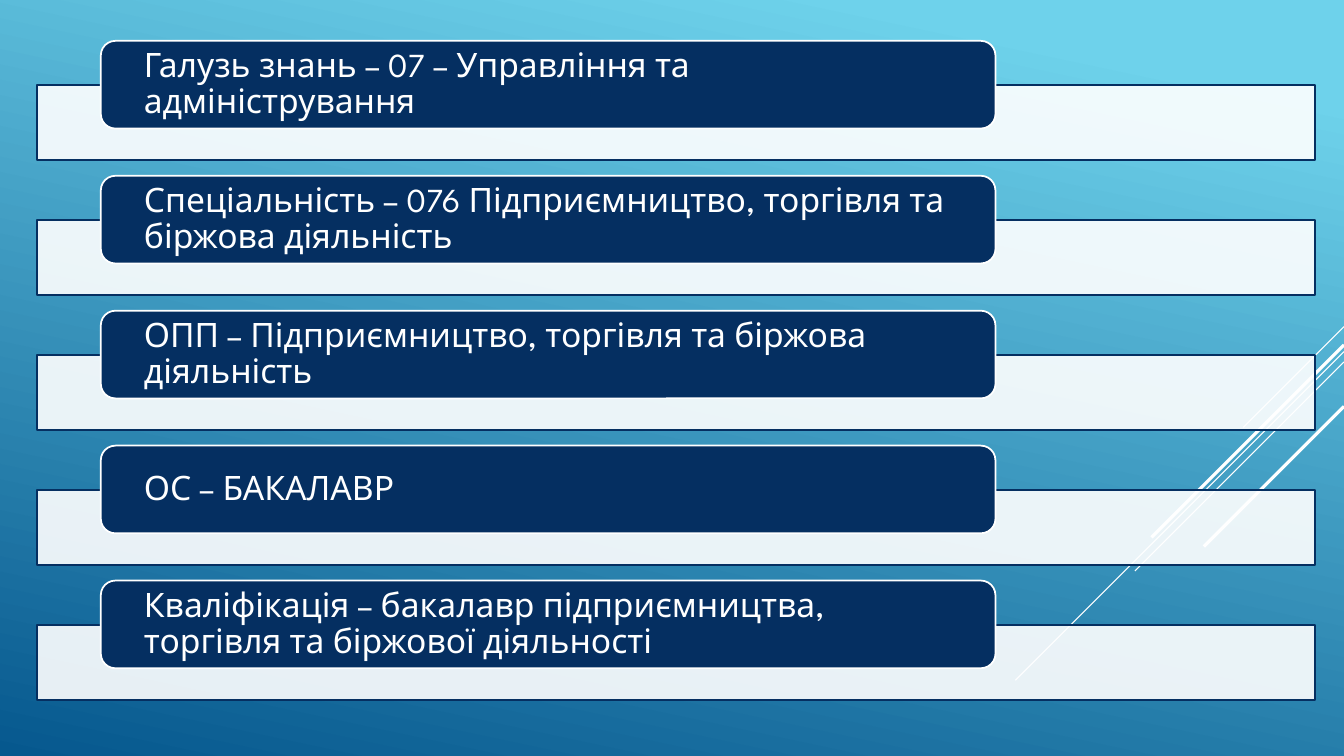
from lxml import etree
from pptx import Presentation
from pptx.dml.color import RGBColor
from pptx.enum.shapes import MSO_CONNECTOR, MSO_SHAPE
from pptx.enum.text import MSO_ANCHOR, PP_ALIGN
from pptx.oxml.ns import qn
from pptx.util import Cm, Pt

SLIDE_WIDTH, SLIDE_HEIGHT = 33.87, 19.05
NAVY, WHITE = "052F61", "FFFFFF"
GRADIENT = [("6ED2EB", 0.1), ("06588E", 1.0)]

# Start height on the right edge, horizontal run (cm) and line width (pt)
RAYS = [
    (8.23, 2.54, 0.75),
    (8.86, 8.28, 0.75),
    (9.12, 5.27, 0.75),
    (8.69, 4.85, 2.25),
    (10.24, 3.53, 2.25),
]
ENTRIES = [
    "Галузь знань – 07 – Управління та адміністрування",
    "Спеціальність – 076 Підприємництво, торгівля та біржова діяльність",
    "ОПП – Підприємництво, торгівля та біржова діяльність",
    "ОС – БАКАЛАВР",
    "Кваліфікація – бакалавр підприємництва, торгівля та біржової діяльності",
]
ROW_PITCH = 3.4


def color(value):
    return RGBColor.from_string(value)


def set_values(target, values):
    for name, value in values.items():
        setattr(target, name, value)


def paint_background(slide):
    fill = slide.background.fill
    fill.gradient()
    fill.gradient_angle = 258
    for stop, (value, position) in zip(fill.gradient_stops, GRADIENT):
        stop.color.rgb = color(value)
        stop.position = position


def add_rays(slide, right):
    """Draw the 45-degree lines that run down and left from the right edge."""
    for top, run, width in RAYS:
        ray = slide.shapes.add_connector(
            MSO_CONNECTOR.STRAIGHT, Cm(right), Cm(top), Cm(right - run), Cm(top + run))
        ray.line.color.rgb = color(WHITE)
        ray.line.width = Pt(width)
        etree.SubElement(ray._element.spPr, qn("a:effectLst"))


def add_block(slide, kind, box, fill, outline):
    shape = slide.shapes.add_shape(kind, *(Cm(length) for length in box))
    shape.shadow.inherit = False
    shape.fill.solid()
    shape.fill.fore_color.rgb = color(fill)
    shape.line.color.rgb = color(outline)
    shape.line.width = Pt(1.25)
    return shape


def add_entry(slide, text, left, top, width):
    """Place a translucent bar with a navy title card overlapping its top."""
    bar = add_block(slide, MSO_SHAPE.RECTANGLE,
                    (left, top + 1.12, width, 1.89), WHITE, NAVY)
    fill_color = bar._element.spPr.find(qn("a:solidFill"))[0]
    etree.SubElement(fill_color, qn("a:alpha"), val="90000")

    card = add_block(slide, MSO_SHAPE.ROUNDED_RECTANGLE,
                     (left + 1.61, top, width * 0.7, 2.21), NAVY, WHITE)
    frame = card.text_frame
    set_values(frame, {
        "word_wrap": True, "vertical_anchor": MSO_ANCHOR.MIDDLE,
        "margin_left": Cm(0.98), "margin_right": Cm(0.98),
        "margin_top": 0, "margin_bottom": 0,
    })
    paragraph = frame.paragraphs[0]
    set_values(paragraph, {"alignment": PP_ALIGN.LEFT, "line_spacing": 0.9})
    run = paragraph.add_run()
    run.text = text
    set_values(run.font, {"name": "League Spartan", "size": Pt(24)})
    run.font.color.rgb = color(WHITE)


def add_entries(slide, left, top, width):
    for index, text in enumerate(ENTRIES):
        add_entry(slide, text, left, top + index * ROW_PITCH, width)


def main():
    presentation = Presentation()
    set_values(presentation, {
        "slide_width": Cm(SLIDE_WIDTH), "slide_height": Cm(SLIDE_HEIGHT)})
    slide = presentation.slides.add_slide(presentation.slide_layouts[6])
    paint_background(slide)
    add_rays(slide, SLIDE_WIDTH)
    add_entries(slide, left=0.93, top=1.03, width=32.21)
    presentation.save("out.pptx")


if __name__ == "__main__":
    main()
